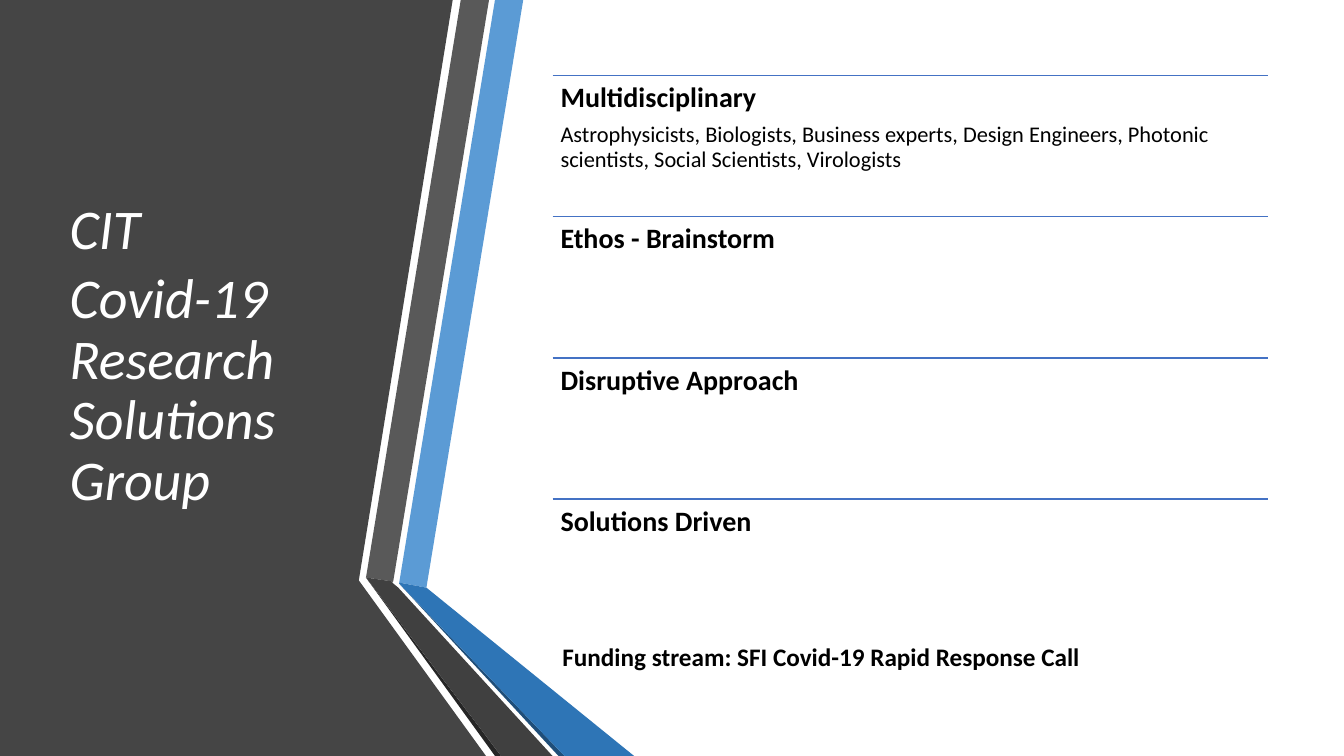
from typing import NamedTuple

from lxml.etree import SubElement
from pptx import Presentation
from pptx.dml.color import RGBColor
from pptx.enum.shapes import MSO_CONNECTOR
from pptx.enum.text import MSO_ANCHOR, MSO_AUTO_SIZE, PP_ALIGN
from pptx.oxml.ns import qn
from pptx.util import Inches, Pt

COLORS = {
    "panel": "454545",
    "grey": "595959",
    "grey_fold": "404040",
    "grey_edge": "262626",
    "blue": "5B9BD5",
    "blue_fold": "2E75B6",
    "blue_edge": "1F4E79",
    "rule": "4472C4",
    "white": "FFFFFF",
    "black": "000000",
}
FONT = "Calibri"


class Band(NamedTuple):
    color: str
    points: list[tuple[float, float]]


class Topic(NamedTuple):
    heading: str
    detail: str = ""


BANDS = [
    Band("panel", [(0, 0), (4.49, 0), (3.56, 5.75), (3.56, 5.76), (4.82, 7.5), (0, 7.5)]),
    Band("blue", [(3.96, 5.78), (4.23, 5.83), (5.19, 0), (4.91, 0)]),
    Band("grey", [(4.85, 0), (4.57, 0), (3.63, 5.73), (3.9, 5.77)]),
    Band("grey_edge", [(3.63, 5.73), (4.91, 7.5), (4.97, 7.5)]),
    Band("blue_edge", [(3.96, 5.79), (5.54, 7.5), (5.6, 7.5)]),
    Band("blue_fold", [(3.96, 5.79), (5.6, 7.5), (6.29, 7.5), (4.23, 5.83), (3.96, 5.78)]),
    Band("grey_fold", [(5.48, 7.5), (3.95, 5.83), (3.89, 5.78), (3.9, 5.77),
                       (3.63, 5.73), (4.97, 7.5)]),
]

TOPICS = [
    Topic("Multidisciplinary",
          "Astrophysicists, Biologists, Business experts, Design Engineers, "
          "Photonic scientists, Social Scientists, Virologists"),
    Topic("Ethos - Brainstorm"),
    Topic("Disruptive Approach"),
    Topic("Solutions Driven"),
]
LIST_LEFT, LIST_TOP, LIST_WIDTH, ROW_HEIGHT = 5.48, 0.75, 7.1, 1.4


def rgb(name: str) -> RGBColor:
    return RGBColor.from_string(COLORS[name])


def write(p, text: str, *, size: float, color: str = "black", bold: bool = False,
          italic: bool = False, spacing: float = 0.9, after: float = 0) -> None:
    p.alignment = PP_ALIGN.LEFT
    p.line_spacing = spacing
    p.space_before = Pt(0)
    p.space_after = Pt(after)
    r = p.add_run()
    r.text = text
    r.font.name = FONT
    r.font.size = Pt(size)
    r.font.bold = bold
    r.font.italic = italic
    r.font.color.rgb = rgb(color)


def add_box(s, left: float, top: float, width: float, height: float):
    tf = s.shapes.add_textbox(*map(Inches, (left, top, width, height))).text_frame
    tf.word_wrap = True
    return tf


def add_band(s, band: Band) -> None:
    start, *rest = [(Inches(x), Inches(y)) for x, y in band.points]
    builder = s.shapes.build_freeform(*start)
    builder.add_line_segments(rest, close=True)
    sp = builder.convert_to_shape()
    sp.shadow.inherit = False
    sp.fill.solid()
    sp.fill.fore_color.rgb = rgb(band.color)
    sp.line.fill.background()


def add_rule(s, top: float) -> None:
    line = s.shapes.add_connector(
        MSO_CONNECTOR.STRAIGHT, Inches(LIST_LEFT), Inches(top),
        Inches(LIST_LEFT + LIST_WIDTH), Inches(top))
    line.line.color.rgb = rgb("rule")
    line.line.width = Pt(1)
    SubElement(line.element.spPr, qn("a:effectLst"))


def add_topic(s, topic: Topic, top: float) -> None:
    add_rule(s, top)
    tf = add_box(s, LIST_LEFT, top, LIST_WIDTH, ROW_HEIGHT)
    tf.margin_left = tf.margin_right = tf.margin_top = tf.margin_bottom = Inches(0.08)
    write(tf.paragraphs[0], topic.heading, size=20, bold=True, after=7)
    if topic.detail:
        write(tf.add_paragraph(), topic.detail, size=16, after=5.6)


def add_title(s) -> None:
    title = s.shapes.title
    title.left, title.top, title.width, title.height = map(Inches, (0.59, 0.75, 3.04, 5.58))
    # Bring the title in front of the dark panel
    title.element.getparent().append(title.element)
    tf = title.text_frame
    tf.word_wrap = True
    tf.auto_size = MSO_AUTO_SIZE.NONE
    tf.vertical_anchor = MSO_ANCHOR.MIDDLE
    style = dict(size=40, color="white", italic=True, after=6)
    write(tf.paragraphs[0], "CIT", **style)
    write(tf.add_paragraph(), "Covid-19 Research Solutions Group", **style)


def main() -> None:
    prs = Presentation()
    prs.slide_width, prs.slide_height = Inches(13.33), Inches(7.5)
    s = prs.slides.add_slide(prs.slide_layouts[5])

    # Dark panel and folded ribbons
    for band in BANDS:
        add_band(s, band)
    add_title(s)

    # Ruled list of topics
    for i, topic in enumerate(TOPICS):
        add_topic(s, topic, LIST_TOP + i * ROW_HEIGHT)

    # Funding line
    tf = add_box(s, LIST_LEFT, 6.31, 6.29, 0.4)
    tf.auto_size = MSO_AUTO_SIZE.SHAPE_TO_FIT_TEXT
    write(tf.paragraphs[0], "Funding stream: SFI Covid-19 Rapid Response Call",
          size=18, bold=True, spacing=1.0)

    prs.save("out.pptx")


if __name__ == "__main__":
    main()
